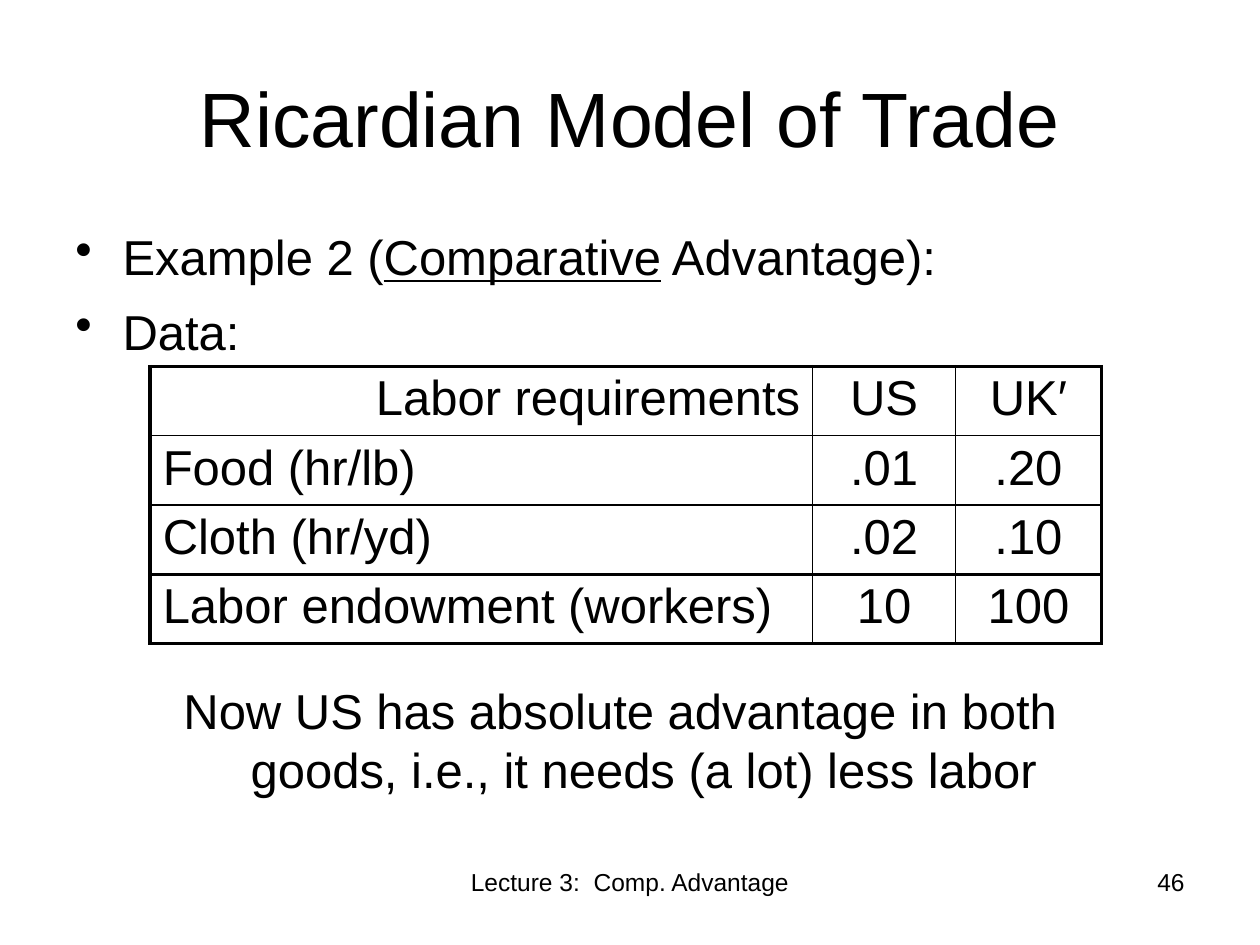
from lxml.etree import SubElement
from pptx import Presentation
from pptx.dml.color import RGBColor
from pptx.enum.text import MSO_ANCHOR, PP_ALIGN
from pptx.oxml.ns import qn
from pptx.util import Inches, Pt

COLORS = {"ink": "000000", "paper": "FFFFFF"}
FONT = "Arial"
COLS, ROWS = 120, 90
UNIT = Inches(10) // COLS
HANG = 4.5
THIN, THICK = 1, 2.25
LEFT, MID, RIGHT = PP_ALIGN.LEFT, PP_ALIGN.CENTER, PP_ALIGN.RIGHT
DATA = [
    ("Labor requirements", "US", "UK′"),
    ("Food (hr/lb)", ".01", ".20"),
    ("Cloth (hr/yd)", ".02", ".10"),
    ("Labor endowment (workers)", "10", "100"),
]
WIDTHS = (63.1, 13.6, 13.9)
ROW = 6.4
HEAVY_COLS, HEAVY_ROWS = (0, 3), (0, 3, 4)


def grid(*cells):
    """Turn grid cells into lengths."""
    return [int(cell * UNIT) for cell in cells]


def style(para, size, align=LEFT):
    """Align a paragraph and format its runs."""
    para.alignment = align
    for run in para.runs:
        run.font.name, run.font.size = FONT, Pt(size)
        run.font.color.rgb = RGBColor.from_string(COLORS["ink"])


def add_text(slide, box, text, size=28, align=LEFT, hang=False, bullet=False):
    """Add a wrapped text box; underscores enclose underlined words."""
    frame = slide.shapes.add_textbox(*grid(*box)).text_frame
    frame.word_wrap = True
    para = frame.paragraphs[0]
    for i, part in enumerate(text.split("_")):
        run = para.add_run()
        run.text = part
        if i % 2:
            run.font.underline = True
    props = para._p.get_or_add_pPr()
    if hang:
        indent, = grid(HANG)
        props.set("marL", str(indent))
        props.set("indent", str(-indent))
    if bullet:
        SubElement(props, qn("a:buChar")).set("char", "•")
    style(para, size, align)


def set_title(slide, box, text):
    """Place and format the title."""
    title = slide.shapes.title
    title.left, title.top, title.width, title.height = grid(*box)
    title.text_frame.text = text
    title.text_frame.vertical_anchor = MSO_ANCHOR.MIDDLE
    style(title.text_frame.paragraphs[0], 44, MID)


def add_edge(cell, side, width):
    """Draw one border of a table cell."""
    line = SubElement(cell._tc.get_or_add_tcPr(), qn(f"a:ln{side}"))
    line.set("w", str(Pt(width)))
    fill = SubElement(line, qn("a:solidFill"))
    SubElement(fill, qn("a:srgbClr")).set("val", COLORS["ink"])


def fill_cell(cell, text, row, col):
    """Write one cell with its borders and fill."""
    edges = {"L": (col, HEAVY_COLS), "R": (col + 1, HEAVY_COLS),
             "T": (row, HEAVY_ROWS), "B": (row + 1, HEAVY_ROWS)}
    for side, (place, heavy) in edges.items():
        add_edge(cell, side, THICK if place in heavy else THIN)
    cell.fill.solid()
    cell.fill.fore_color.rgb = RGBColor.from_string(COLORS["paper"])
    cell.margin_top, cell.margin_bottom = grid(0.5, 0.5)
    cell.text_frame.text = text
    align = MID if col else LEFT if row else RIGHT
    style(cell.text_frame.paragraphs[0], 28, align)


def add_grid(slide, left, top):
    """Add the table of labor data."""
    box = grid(left, top, sum(WIDTHS), ROW * len(DATA))
    table = slide.shapes.add_table(len(DATA), len(WIDTHS), *box).table
    for col, width in zip(table.columns, grid(*WIDTHS)):
        col.width = width
    for r, texts in enumerate(DATA):
        table.rows[r].height, = grid(ROW)
        for c, text in enumerate(texts):
            fill_cell(table.cell(r, c), text, r, c)


def main():
    """Build and save the slide."""
    deck = Presentation()
    deck.slide_width, deck.slide_height = grid(COLS, ROWS)
    slide = deck.slides.add_slide(deck.slide_layouts[5])
    set_title(slide, (6, 3.6, 108, 15), "Ricardian Model of Trade")
    add_text(slide, (6, 21, 97.5, 9.8), "Example 2 (_Comparative_ Advantage):",
             hang=True, bullet=True)
    add_text(slide, (6, 28.1, 53, 9.8), "Data:", hang=True, bullet=True)
    add_grid(slide, 14.3, 34.9)
    add_text(slide, (13.2, 64.2, 91.7, 9.8),
             "Now US has absolute advantage in both goods, "
             "i.e., it needs (a lot) less labor", align=MID, hang=True)
    add_text(slide, (41, 82, 38, 6.2), "Lecture 3:  Comp. Advantage", 14, MID)
    add_text(slide, (86, 82, 28, 6.2), "46", 14, RIGHT)
    deck.save("out.pptx")


if __name__ == "__main__":
    main()
